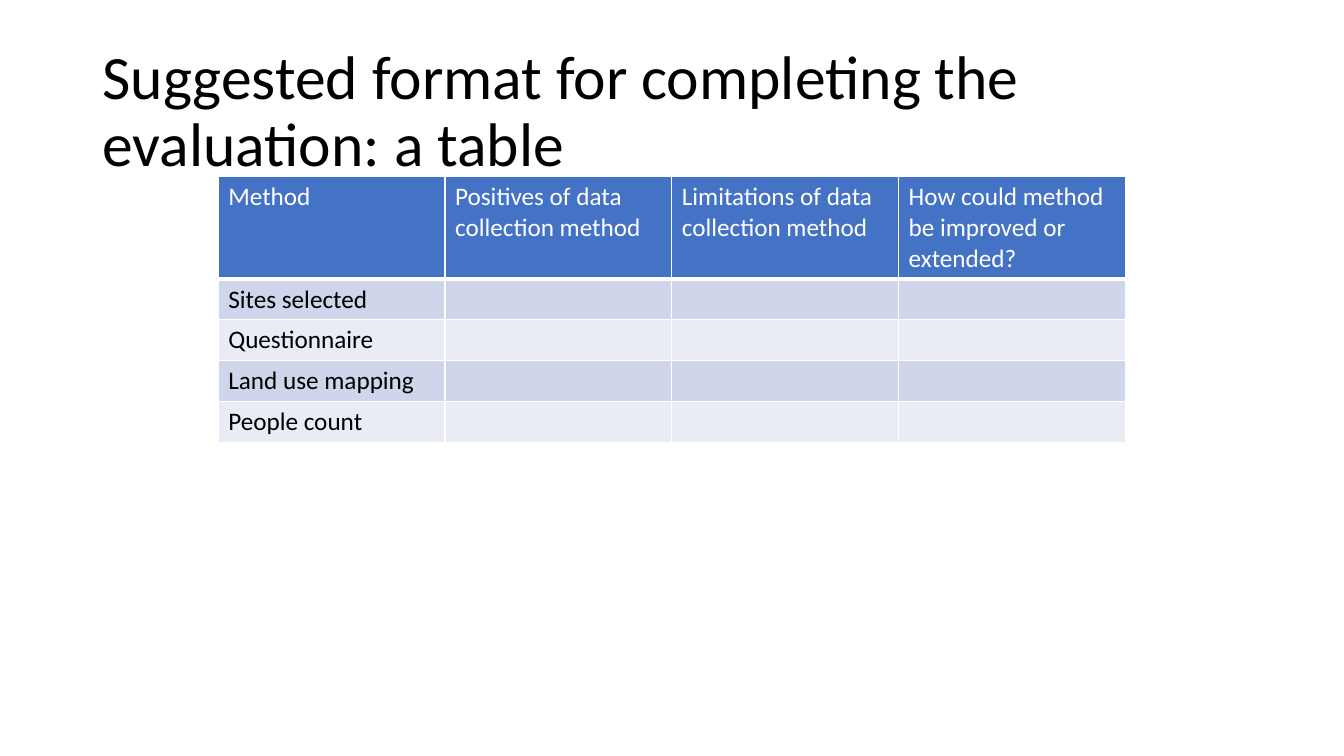
from dataclasses import dataclass

import pptx
import pptx.dml.color
import pptx.enum.text
import pptx.oxml
import pptx.oxml.ns
import pptx.util
from pptx.dml.color import RGBColor
from pptx.util import Cm

WHITE = RGBColor(0xFF, 0xFF, 0xFF)
BLACK = RGBColor(0x00, 0x00, 0x00)
BLUE = RGBColor(0x44, 0x72, 0xC4)
MID = RGBColor(0xCF, 0xD5, 0xEA)
PALE = RGBColor(0xE9, 0xEB, 0xF5)
FONT = "Calibri"


@dataclass
class Row:
    texts: list[str]
    fill: RGBColor
    ink: RGBColor = BLACK
    high: float = 1.03
    base: float = 1


HEAD = Row(
    [
        "Method",
        "Positives of data collection method",
        "Limitations of data collection method",
        "How could method be improved or extended?",
    ],
    BLUE, WHITE, high=2.54, base=3,
)
METHODS = ["Sites selected", "Questionnaire", "Land use mapping", "People count"]
ROWS = [HEAD] + [
    Row([name, "", "", ""], PALE if i % 2 else MID)
    for i, name in enumerate(METHODS)
]


def style(para, size: float, ink: RGBColor) -> None:
    for run in para.runs:
        run.font.name = FONT
        run.font.size = pptx.util.Pt(size)
        run.font.bold = False
        run.font.color.rgb = ink


def edge(cell, base: float) -> None:
    """Draw white cell borders, with the bottom one base points wide."""
    props = cell._tc.get_or_add_tcPr()
    for side, width in (("L", 1), ("R", 1), ("T", 1), ("B", base)):
        props.append(pptx.oxml.parse_xml(
            f'<a:ln{side} {pptx.oxml.ns.nsdecls("a")} w="{pptx.util.Pt(width)}">'
            f'<a:solidFill><a:srgbClr val="{WHITE}"/></a:solidFill></a:ln{side}>'
        ))


def add_title(slide) -> None:
    title = slide.shapes.title
    title.left, title.top = Cm(2.33), Cm(1.01)
    title.width, title.height = Cm(29.21), Cm(3.68)
    frame = title.text_frame
    frame.text = "Suggested format for completing the evaluation: a table"
    frame.word_wrap = True
    frame.auto_size = pptx.enum.text.MSO_AUTO_SIZE.NONE
    frame.vertical_anchor = pptx.enum.text.MSO_ANCHOR.MIDDLE
    para = frame.paragraphs[0]
    para.alignment = pptx.enum.text.PP_ALIGN.LEFT
    para.line_spacing = 0.9
    style(para, 44, BLACK)


def add_grid(slide) -> None:
    high = sum(row.high for row in ROWS)
    table = slide.shapes.add_table(
        len(ROWS), len(HEAD.texts), Cm(5.5), Cm(4.45), Cm(22.86), Cm(high)
    ).table
    for line, row in zip(table.rows, ROWS):
        line.height = Cm(row.high)
        for cell, text in zip(line.cells, row.texts):
            edge(cell, row.base)
            cell.fill.solid()
            cell.fill.fore_color.rgb = row.fill
            if text:
                cell.text_frame.text = text
                style(cell.text_frame.paragraphs[0], 18, row.ink)


def main() -> None:
    deck = pptx.Presentation()
    deck.slide_width, deck.slide_height = Cm(33.87), Cm(19.05)
    slide = deck.slides.add_slide(deck.slide_layouts[5])
    add_title(slide)
    add_grid(slide)
    deck.save("out.pptx")


if __name__ == "__main__":
    main()
